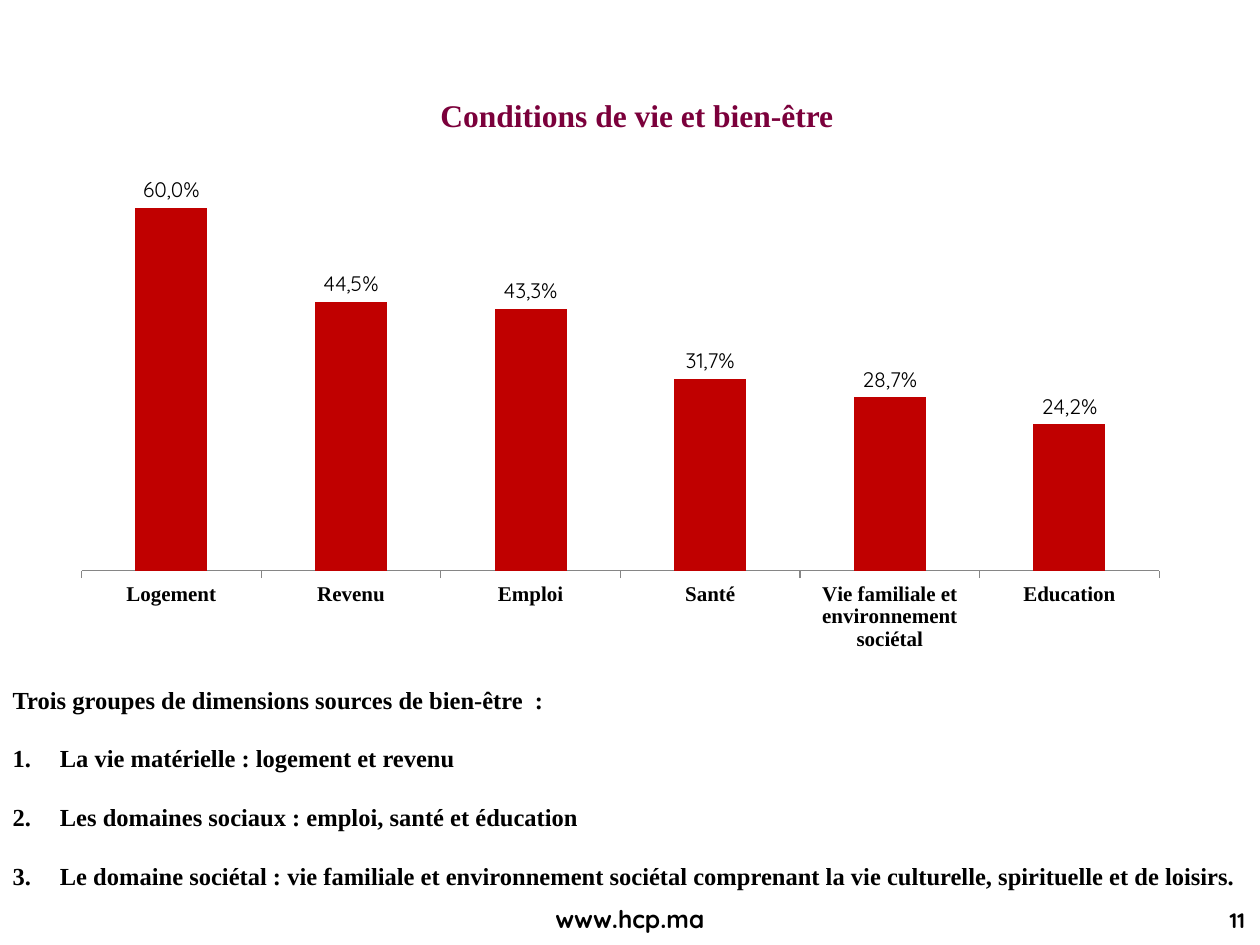
from lxml.etree import SubElement
from pptx import Presentation
from pptx.chart.data import CategoryChartData
from pptx.dml.color import RGBColor
from pptx.enum.chart import XL_CHART_TYPE, XL_LABEL_POSITION, XL_TICK_LABEL_POSITION, XL_TICK_MARK
from pptx.enum.text import MSO_ANCHOR, MSO_AUTO_SIZE, PP_ALIGN
from pptx.oxml import parse_xml
from pptx.oxml.ns import nsdecls, qn
from pptx.util import Pt

BLACK = RGBColor(0, 0, 0)
PLUM = RGBColor(0x7B, 0x00, 0x3B)
RED = RGBColor(0xC0, 0x00, 0x00)
GREY = RGBColor(0x86, 0x86, 0x86)
SERIF, SANS = "Times New Roman", "Quicksand"

TITLE = "Conditions de vie et bien-être"
SATISFACTION = [
    ("Logement", 60),
    ("Revenu", 44.5),
    ("Emploi", 43.3),
    ("Santé", 31.7),
    ("Vie familiale et environnement sociétal", 28.7),
    ("Education", 24.2),
]
INTRO = "Trois groupes de dimensions sources de bien-être  :"
GROUPS = [
    "La vie matérielle : logement et revenu",
    "Les domaines sociaux : emploi, santé et éducation",
    "Le domaine sociétal : vie familiale et environnement sociétal "
    "comprenant la vie culturelle, spirituelle et de loisirs.",
]
FOOTERS = [
    ("www.hcp.ma", (275, 513.2, 170, 24), 14, PP_ALIGN.CENTER, MSO_ANCHOR.TOP),
    ("11", (609, 513.2, 109.5, 25.2), 12, PP_ALIGN.RIGHT, MSO_ANCHOR.MIDDLE),
]


def style(font, name, size, color=BLACK, bold=True):
    font.name, font.size, font.bold = name, Pt(size), bold
    font.color.rgb = color


def add_run(p, text, *look):
    r = p.add_run()
    r.text = text
    style(r.font, *look)


def place(sp, left, top, width, height):
    sp.left, sp.top, sp.width, sp.height = Pt(left), Pt(top), Pt(width), Pt(height)


def set_frame(sp, anchor):
    tf = sp.text_frame
    tf.word_wrap = True
    tf.auto_size = MSO_AUTO_SIZE.NONE
    tf.vertical_anchor = anchor
    return tf


def set_bullet(p, numbered):
    pPr = p._p.get_or_add_pPr()
    indent = Pt(27) if numbered else 0
    pPr.set("marL", str(indent))
    pPr.set("indent", str(-indent))
    if numbered:
        SubElement(pPr, qn("a:buFont"), typeface="+mj-lt")
        SubElement(pPr, qn("a:buAutoNum"), type="arabicPeriod")
    else:
        SubElement(pPr, qn("a:buNone"))


def add_title(s):
    sp = s.shapes.title
    place(sp, 89, 54.2, 550, 23)
    p = set_frame(sp, MSO_ANCHOR.MIDDLE).paragraphs[0]
    p.alignment = PP_ALIGN.CENTER
    add_run(p, TITLE, SERIF, 18, PLUM)


def add_groups(s):
    sp = s.placeholders[1]
    place(sp, 0, 388, 720, 124)
    tf = set_frame(sp, MSO_ANCHOR.MIDDLE)
    for i, text in enumerate([INTRO] + GROUPS):
        p = tf.add_paragraph() if i else tf.paragraphs[0]
        set_bullet(p, numbered=i > 0)
        p.alignment = PP_ALIGN.JUSTIFY
        p.space_before = Pt(16.75 if i else 0)
        add_run(p, text, SERIF, 14)


def add_satisfaction_chart(s):
    data = CategoryChartData(number_format="0.0")
    data.categories = [name for name, _ in SATISFACTION]
    data.add_series("Series 1", [value for _, value in SATISFACTION])
    chart = s.shapes.add_chart(
        XL_CHART_TYPE.COLUMN_CLUSTERED, Pt(33.8), Pt(78.5), Pt(641.5), Pt(299.5), data
    ).chart
    chart.has_legend = chart.has_title = False
    style(chart.font, SANS, 10, BLACK, False)

    value_axis = chart.value_axis
    value_axis.minimum_scale, value_axis.maximum_scale = 0, 70
    value_axis.has_major_gridlines = False
    value_axis.visible = False
    axis = chart.category_axis
    axis.major_tick_mark = XL_TICK_MARK.OUTSIDE
    axis.tick_label_position = XL_TICK_LABEL_POSITION.LOW
    axis.format.line.color.rgb = GREY
    axis.format.line.width = Pt(0.75)
    style(axis.tick_labels.font, SERIF, 12)

    plot = chart.plots[0]
    plot.gap_width = 150
    plot.vary_by_categories = False
    bars = plot.series[0]
    bars.format.fill.solid()
    bars.format.fill.fore_color.rgb = RED
    labels = bars.data_labels
    labels.show_value = True
    labels.number_format, labels.number_format_is_linked = "0.0", False
    labels.position = XL_LABEL_POSITION.OUTSIDE_END
    style(labels.font, SANS, 12)
    for i, (_, value) in enumerate(SATISFACTION):
        label = bars.points[i].data_label
        text = f"{value:.1f}%".replace(".", ",")
        add_run(label.text_frame.paragraphs[0], text, SANS, 12, BLACK, False)
        label.position = XL_LABEL_POSITION.OUTSIDE_END

    area = chart._chartSpace.chart.plotArea
    for old in area.findall(qn("c:layout")):
        area.remove(old)
    area.insert(0, parse_xml(
        f'<c:layout {nsdecls("c")}><c:manualLayout><c:layoutTarget val="inner"/>'
        '<c:xMode val="edge"/><c:yMode val="edge"/><c:x val="0.02"/><c:y val="0.02"/>'
        '<c:w val="0.96"/><c:h val="0.807"/></c:manualLayout></c:layout>'
    ))


def add_footers(s):
    for text, box, size, align, anchor in FOOTERS:
        sp = s.shapes.add_textbox(*map(Pt, box))
        p = set_frame(sp, anchor).paragraphs[0]
        p.alignment = align
        add_run(p, text, SANS, size)


def main():
    prs = Presentation()
    prs.slide_width, prs.slide_height = Pt(720), Pt(540)
    s = prs.slides.add_slide(prs.slide_layouts[1])
    add_title(s)
    add_groups(s)
    add_satisfaction_chart(s)
    add_footers(s)
    prs.save("out.pptx")


if __name__ == "__main__":
    main()
